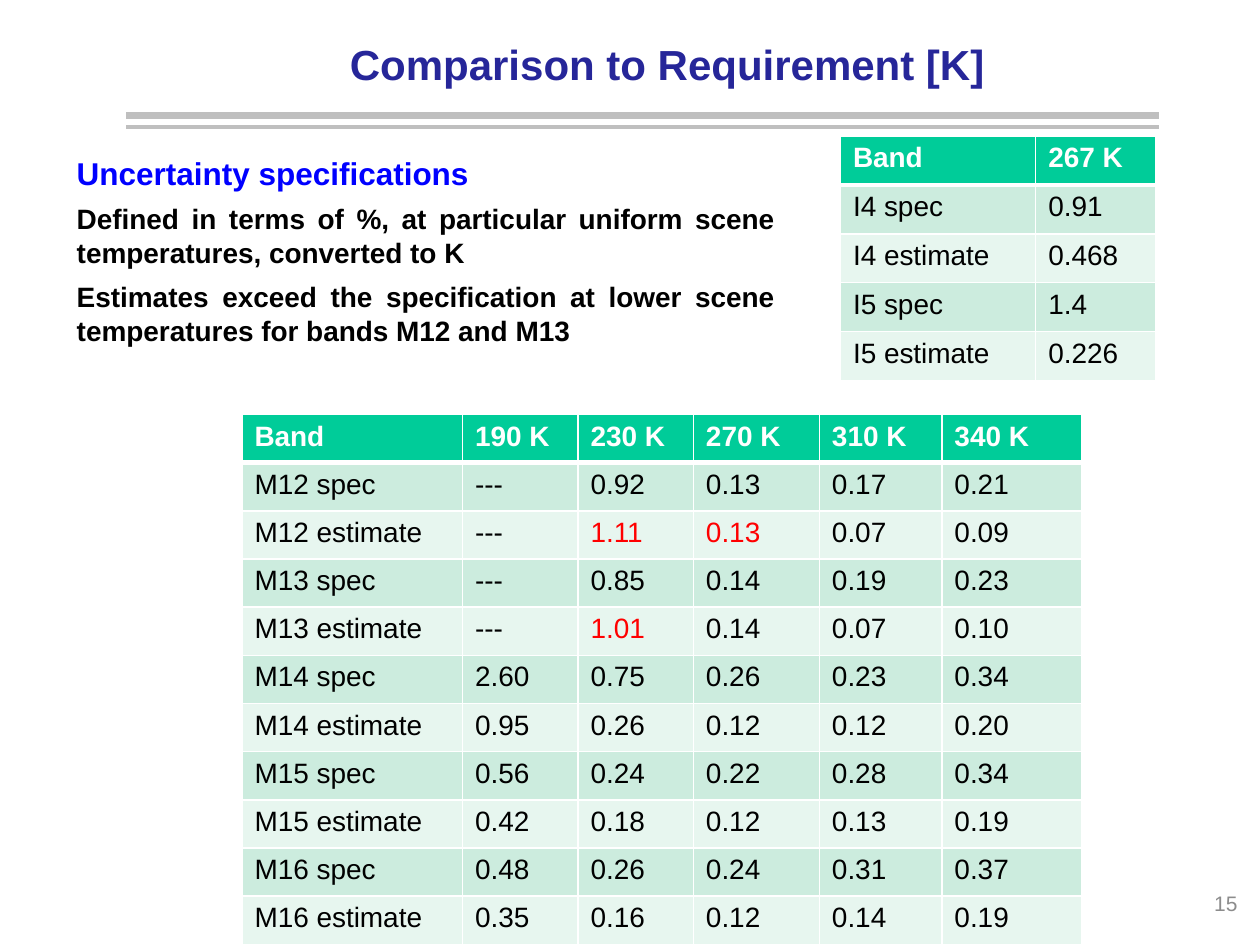
from dataclasses import dataclass

from lxml import etree
from pptx import Presentation
from pptx import util as u
from pptx.dml.color import RGBColor
from pptx.enum import shapes, text
from pptx.oxml import ns

FONT = "Arial"
WHITE, BLACK, RED = "FFFFFF", "000000", "FF0000"
HEADER_FILL, BAND_FILLS = "00CC99", ("CCECDE", "E7F6EF")
ALIGN = text.PP_ALIGN


@dataclass
class Line:
    """One paragraph of text with its format."""
    words: str
    size: float
    color: str
    bold: bool = False
    align: ALIGN = ALIGN.LEFT
    after: float = 0


@dataclass
class BandTable:
    left: float
    top: float
    widths: list[float]
    row_height: float
    rows: list[list[str]]
    red_cells: tuple = ()


def rgb(color: str) -> RGBColor:
    return RGBColor.from_string(color)


def write(frame, lines: list[Line]) -> None:
    frame.text = "\n".join(line.words for line in lines)
    for para, line in zip(frame.paragraphs, lines):
        para.alignment = line.align
        para.space_after = u.Pt(line.after)
        for span in para.runs:
            span.font.name = FONT
            span.font.size = u.Pt(line.size)
            span.font.bold = line.bold
            span.font.color.rgb = rgb(line.color)


def add_label(page, left: float, top: float, width: float, height: float, line: Line) -> None:
    box = page.shapes.add_textbox(u.Pt(left), u.Pt(top), u.Pt(width), u.Pt(height))
    box.text_frame.word_wrap = True
    box.text_frame.vertical_anchor = text.MSO_ANCHOR.MIDDLE
    write(box.text_frame, [line])


def add_rule(page, y: float, weight: float) -> None:
    rule = page.shapes.add_connector(
        shapes.MSO_CONNECTOR.STRAIGHT, u.Pt(72), u.Pt(y), u.Pt(662.4), u.Pt(y))
    rule.line.color.rgb = rgb("BFBFBF")
    rule.line.width = u.Pt(weight)
    etree.SubElement(rule.element.spPr, ns.qn("a:effectLst"))


def add_borders(cell, top: float, bottom: float) -> None:
    """Draw white cell edges; only top and bottom weights vary."""
    properties = cell._tc.get_or_add_tcPr()
    for side, weight in (("L", 1), ("R", 1), ("T", top), ("B", bottom)):
        edge = etree.SubElement(properties, ns.qn(f"a:ln{side}"), w=str(u.Pt(weight)))
        fill = etree.SubElement(edge, ns.qn("a:solidFill"))
        etree.SubElement(fill, ns.qn("a:srgbClr"), val=WHITE)


def add_band_table(page, data: BandTable) -> None:
    count = len(data.rows)
    table = page.shapes.add_table(
        count, len(data.widths), u.Pt(data.left), u.Pt(data.top),
        u.Pt(sum(data.widths)), u.Pt(data.row_height * count)).table
    for column, width in zip(table.columns, data.widths):
        column.width = u.Pt(width)
    for r, values in enumerate(data.rows):
        table.rows[r].height = u.Pt(data.row_height)
        header = r == 0
        for c, value in enumerate(values):
            cell = table.cell(r, c)
            color = WHITE if header else RED if (r, c) in data.red_cells else BLACK
            write(cell.text_frame, [Line(value, 16, color, header)])
            add_borders(cell, 3 if r == 1 else 1, 3 if header else 1)
            cell.fill.solid()
            cell.fill.fore_color.rgb = rgb(HEADER_FILL if header else BAND_FILLS[(r - 1) % 2])


def add_summary(page, lines: list[Line]) -> None:
    box = page.shapes.add_shape(
        shapes.MSO_SHAPE.ROUNDED_RECTANGLE, u.Pt(30.24), u.Pt(77.76), u.Pt(426.24), u.Pt(131.04))
    box.adjustments[0] = 0.17
    box.shadow.inherit = False
    box.fill.background()
    box.line.fill.background()
    box.text_frame.word_wrap = True
    box.text_frame.vertical_anchor = text.MSO_ANCHOR.TOP
    write(box.text_frame, lines)


I_BANDS = BandTable(480.24, 77.76, [111.6, 68.4], 27.94, [
    ["Band", "267 K"],
    ["I4 spec", "0.91"],
    ["I4 estimate", "0.468"],
    ["I5 spec", "1.4"],
    ["I5 estimate", "0.226"],
])
M_BANDS = BandTable(138.24, 236.88, [126, 66, 66, 72, 70, 80], 27.55, [
    ["Band", "190 K", "230 K", "270 K", "310 K", "340 K"],
    ["M12 spec", "---", "0.92", "0.13", "0.17", "0.21"],
    ["M12 estimate", "---", "1.11", "0.13", "0.07", "0.09"],
    ["M13 spec", "---", "0.85", "0.14", "0.19", "0.23"],
    ["M13 estimate", "---", "1.01", "0.14", "0.07", "0.10"],
    ["M14 spec", "2.60", "0.75", "0.26", "0.23", "0.34"],
    ["M14 estimate", "0.95", "0.26", "0.12", "0.12", "0.20"],
    ["M15 spec", "0.56", "0.24", "0.22", "0.28", "0.34"],
    ["M15 estimate", "0.42", "0.18", "0.12", "0.13", "0.19"],
    ["M16 spec", "0.48", "0.26", "0.24", "0.31", "0.37"],
    ["M16 estimate", "0.35", "0.16", "0.12", "0.14", "0.19"],
], red_cells=((2, 2), (2, 3), (4, 2)))
SUMMARY = [
    Line("Uncertainty specifications", 18, "0000FF", True, after=6),
    Line("Defined in terms of %, at particular uniform scene temperatures, converted to K",
         16, BLACK, True, ALIGN.JUSTIFY, 6),
    Line("Estimates exceed the specification at lower scene temperatures for bands M12 and M13",
         16, BLACK, True, ALIGN.JUSTIFY),
]


def main() -> None:
    deck = Presentation()
    deck.slide_width, deck.slide_height = u.Pt(720), u.Pt(540)
    page = deck.slides.add_slide(deck.slide_layouts[6])
    add_rule(page, 66.24, 4)
    add_rule(page, 72.72, 2)
    add_band_table(page, I_BANDS)
    add_label(page, 120.24, 12.24, 522, 48.24,
              Line("Comparison to Requirement [K]", 24, "262699", True, ALIGN.CENTER))
    add_summary(page, SUMMARY)
    add_band_table(page, M_BANDS)
    add_label(page, 662.4, 498.24, 51.84, 36, Line("15", 12, "8C8C8C", align=ALIGN.RIGHT))
    deck.save("out.pptx")


if __name__ == "__main__":
    main()
